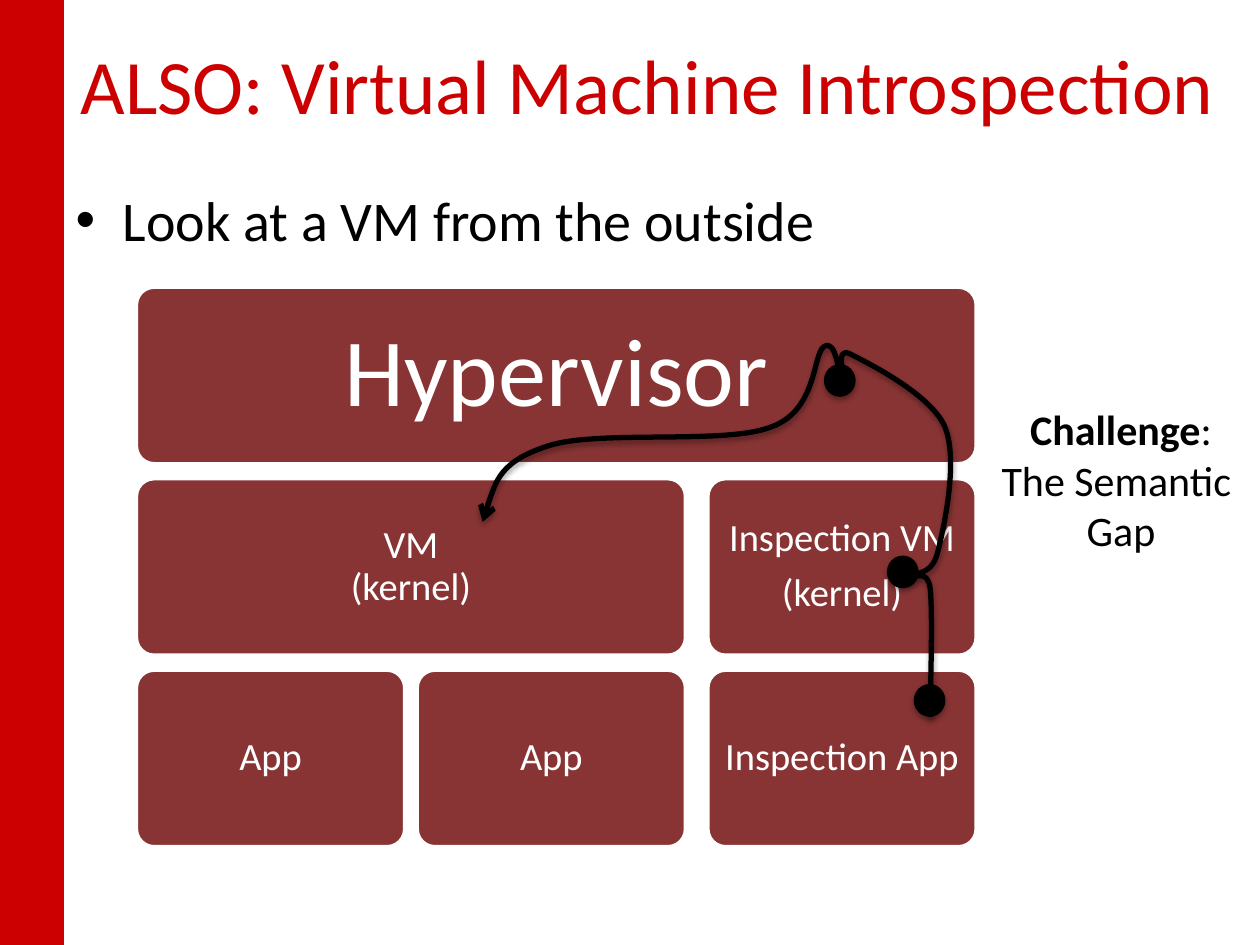
from dataclasses import dataclass

from lxml import etree
from pptx import Presentation, util as u
from pptx.dml.color import RGBColor
from pptx.enum import shapes, text
from pptx.oxml.ns import qn

RED = RGBColor(0xCC, 0x00, 0x00)
MAROON = RGBColor(0x88, 0x34, 0x34)
BLACK = RGBColor(0x00, 0x00, 0x00)
WHITE = RGBColor(0xFF, 0xFF, 0xFF)
FONT = "Calibri"

COLUMNS = (2.75, 8.41, 14.27)
COLUMN_WIDTH = 5.41
TOP = 5.79
ROW_PITCH = 3.86
ROW_HEIGHT = 3.56
DOT_WIDTH, DOT_HEIGHT = 0.64, 0.66


@dataclass(frozen=True)
class Layer:
    label: str
    row: int
    first: int
    last: int
    size: int = 22


@dataclass(frozen=True)
class Dot:
    left: float
    top: float


LAYERS = (
    Layer("Hypervisor", 0, 0, 2, 55),
    Layer("VM\v(kernel)", 1, 0, 1),
    Layer("App", 2, 0, 0),
    Layer("App", 2, 1, 1),
    Layer("Inspection VM\n(kernel)", 1, 2, 2),
    Layer("Inspection App", 2, 2, 2),
)
DOTS = (Dot(18.42, 13.79), Dot(17.88, 11.2), Dot(16.61, 7.34))

ROUTE_START = (18.75, 14.45)
ROUTE_CURVES = (
    ((18.77, 13.39), (18.8, 12.32), (18.75, 11.84)),
    ((18.67, 11.38), (18.29, 11.76), (18.31, 11.63)),
    ((18.34, 11.53), (18.77, 11.66), (18.9, 11.15)),
    ((19.02, 10.67), (19.33, 9.3), (19.05, 8.61)),
    ((18.77, 7.95), (17.5, 7.32), (17.15, 7.14)),
    ((16.79, 6.96), (17.07, 7.65), (16.99, 7.62)),
    ((16.89, 7.59), (16.87, 6.81), (16.61, 6.99)),
    ((16.38, 7.14), (16.48, 8.28), (15.54, 8.61)),
    ((14.63, 8.97), (12.04, 8.66), (11.05, 8.99)),
    ((10.08, 9.3), (9.91, 9.91), (9.73, 10.52)),
)


def place(shape, left: float, top: float, width: float, height: float) -> None:
    shape.left, shape.top = u.Cm(left), u.Cm(top)
    shape.width, shape.height = u.Cm(width), u.Cm(height)


def style(paragraph, size: int, color: RGBColor) -> None:
    paragraph.font.name = FONT
    paragraph.font.size = u.Pt(size)
    paragraph.font.color.rgb = color


def add_solid(slide, kind, box: tuple, color: RGBColor):
    solid = slide.shapes.add_shape(kind, *(u.Cm(length) for length in box))
    solid.shadow.inherit = False
    solid.fill.solid()
    solid.fill.fore_color.rgb = color
    solid.line.fill.background()
    return solid


def add_shadow(shape) -> None:
    shape.shadow.inherit = False
    effects = shape.element.spPr.find(qn("a:effectLst"))
    shadow = etree.SubElement(effects, qn("a:outerShdw"), blurRad="40000",
                              dist="23000", dir="5400000", rotWithShape="0")
    tint = etree.SubElement(shadow, qn("a:srgbClr"), val=str(BLACK))
    etree.SubElement(tint, qn("a:alpha"), val="35000")


def add_layer(slide, layer: Layer) -> None:
    left = COLUMNS[layer.first]
    width = COLUMNS[layer.last] + COLUMN_WIDTH - left
    box = (left, TOP + layer.row * ROW_PITCH, width, ROW_HEIGHT)
    block = add_solid(slide, shapes.MSO_SHAPE.ROUNDED_RECTANGLE, box, MAROON)
    block.adjustments[0] = 0.1
    block.line.color.rgb = WHITE
    block.line.width = u.Pt(2)
    frame = block.text_frame
    frame.margin_left = frame.margin_right = u.Cm(0.2)
    frame.margin_top = frame.margin_bottom = u.Cm(0.2)
    frame.vertical_anchor = text.MSO_ANCHOR.MIDDLE
    frame.text = layer.label
    for paragraph in frame.paragraphs:
        paragraph.alignment = text.PP_ALIGN.CENTER
        paragraph.line_spacing = 0.9
        paragraph.space_after = u.Pt(layer.size * 0.35)
        style(paragraph, layer.size, WHITE)


def add_dot(slide, dot: Dot) -> None:
    box = (dot.left, dot.top, DOT_WIDTH, DOT_HEIGHT)
    add_shadow(add_solid(slide, shapes.MSO_SHAPE.OVAL, box, BLACK))


def add_route(slide) -> None:
    points = [(u.Cm(x), u.Cm(y)) for curve in ROUTE_CURVES for x, y in curve]
    builder = slide.shapes.build_freeform(*(u.Cm(value) for value in ROUTE_START))
    builder.add_line_segments(points, close=False)
    route = builder.convert_to_shape()
    segments = list(route.element.iter(qn("a:lnTo")))
    for first in range(0, len(segments), 3):
        outline = segments[first].getparent()
        curve = etree.SubElement(outline, qn("a:cubicBezTo"))
        for segment in segments[first:first + 3]:
            curve.append(segment[0])
            outline.remove(segment)
    route.fill.background()
    route.line.color.rgb = BLACK
    route.line.width = u.Pt(3)
    etree.SubElement(route.element.spPr.find(qn("a:ln")), qn("a:tailEnd"), type="arrow")
    add_shadow(route)


def add_challenge(slide) -> None:
    note = slide.shapes.add_textbox(0, 0, 0, 0)
    place(note, 19.91, 8, 5.38, 3.33)
    frame = note.text_frame
    frame.word_wrap = False
    frame.auto_size = text.MSO_AUTO_SIZE.SHAPE_TO_FIT_TEXT
    frame.vertical_anchor = text.MSO_ANCHOR.MIDDLE
    heading = frame.paragraphs[0]
    term = heading.add_run()
    term.text = "Challenge"
    term.font.bold = True
    heading.add_run().text = ":"
    frame.add_paragraph().text = "The Semantic \vGap"
    for paragraph in frame.paragraphs:
        paragraph.alignment = text.PP_ALIGN.CENTER
        style(paragraph, 24, BLACK)


def main() -> None:
    deck = Presentation()
    deck.slide_width, deck.slide_height = u.Cm(25.4), u.Cm(19.05)
    slide = deck.slides.add_slide(deck.slide_layouts[1])

    sidebar = add_solid(slide, shapes.MSO_SHAPE.RECTANGLE, (0, 0, 1.27, 19.05), RED)
    sidebar.line.color.rgb = RED
    sidebar.line.width = u.Pt(0.75)

    title = slide.shapes.title
    place(title, 1.37, 0.1, 24.03, 3.18)
    title.text_frame.text = "ALSO: Virtual Machine Introspection"
    title.text_frame.vertical_anchor = text.MSO_ANCHOR.MIDDLE
    title.text_frame.paragraphs[0].alignment = text.PP_ALIGN.LEFT
    style(title.text_frame.paragraphs[0], 44, RED)

    body = slide.placeholders[1]
    place(body, 1.27, 3.61, 23.93, 13.13)
    body.text_frame.text = "Look at a VM from the outside"
    style(body.text_frame.paragraphs[0], 32, BLACK)

    for layer in LAYERS:
        add_layer(slide, layer)
    add_route(slide)
    for dot in DOTS:
        add_dot(slide, dot)
    add_challenge(slide)
    deck.save("out.pptx")


if __name__ == "__main__":
    main()
